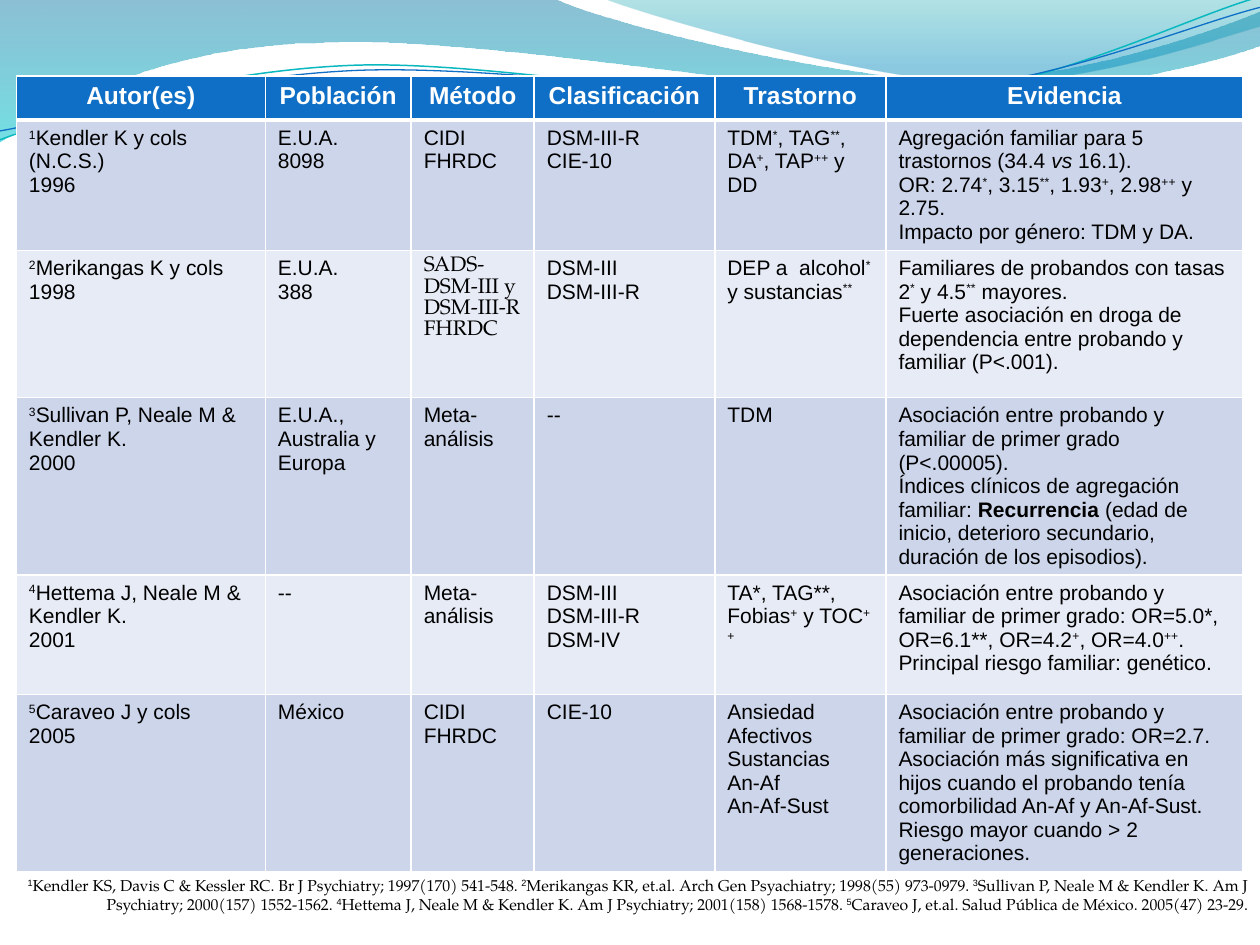
from lxml.etree import SubElement
from pptx import Presentation
from pptx.dml.color import RGBColor
from pptx.enum.text import PP_ALIGN
from pptx.oxml import parse_xml
from pptx.oxml.ns import nsdecls, qn
from pptx.util import Cm, Pt

COLORS = {
    "header": "0F6FC6", "odd row": "CCD5EA", "even row": "E7EBF5",
    "white": "FFFFFF", "black": "000000",
    "teal line": "0AB8BF", "blue line": "0F6FC6",
    "deep blue": "0074A1", "cyan": "00C6CF", "green": "00A1A9", "sky": "008BBF",
}
RGB = {name: RGBColor.from_string(value) for name, value in COLORS.items()}
SANS, SERIF = "Arial", "TeX Gyre Pagella"


def add_wave(slide, start, segments, close):
    """Draw an outline; a segment is one point (line) or three points (Bezier curve)."""
    builder = slide.shapes.build_freeform(Cm(start[0]), Cm(start[1]))
    ends = [(Cm(segment[-1][0]), Cm(segment[-1][1])) for segment in segments]
    builder.add_line_segments(ends, close=close)
    shape = builder.convert_to_shape()
    shape.shadow.inherit = False
    lines = list(shape._element.iter(qn("a:lnTo")))
    for line, segment in zip(lines, segments):
        if len(segment) == 3:
            points = "".join(f'<a:pt x="{Cm(x) - shape.left}" y="{Cm(y) - shape.top}"/>'
                             for x, y in segment)
            line.getparent().replace(line, parse_xml(
                f'<a:cubicBezTo {nsdecls("a")}>{points}</a:cubicBezTo>'))
    return shape


def write_runs(paragraph, text, size, name, color, mark_name=None):
    """Between bars, ^ marks superscript, / italic and * bold."""
    paragraph.font.size = Pt(size)
    paragraph.font.name = name
    paragraph.font.color.rgb = RGB[color]
    for index, piece in enumerate(text.split("|")):
        if not piece:
            continue
        run = paragraph.add_run()
        run.text = piece[1:] if index % 2 else piece
        if index % 2 and piece[0] == "^":
            run.font._element.set("baseline", "30000")
            if mark_name:
                run.font.name = mark_name
        elif index % 2:
            run.font.italic = piece[0] == "/" or None
            run.font.bold = piece[0] == "*" or None


presentation = Presentation()
presentation.slide_width, presentation.slide_height = Cm(25.4), Cm(19.05)
slide = presentation.slides.add_slide(presentation.slide_layouts[6])

# Translucent bands: start, segments, gradient stops (colour, position, opacity)
bands = [
    ((0, -0.03),
     [[(11.18, -0.03)],
      [(12.09, 0.43), (16.87, 1.6), (19.25, 1.6)],
      [(21.67, 1.6), (24.33, 0.66), (25.4, 0.23)],
      [(25.42, 0.91)],
      [(24.97, 1.12), (22.1, 1.93), (18.95, 1.91)],
      [(15.8, 1.91), (9.7, 0.71), (6.53, 0.86)],
      [(3.28, 0.89), (1.17, 2.11), (-0.03, 2.87)]],
     [("deep blue", 0, 45), ("cyan", 1, 55)]),
    ((12.17, -0.03),
     [[(12.93, 0.28), (17.32, 1.57), (19.53, 1.65)],
      [(21.74, 1.75), (24.41, 0.81), (25.4, 0.53)],
      [(25.4, 0)]],
     [("green", 0, 30), ("sky", 0.8, 45)]),
]
for start, segments, stops in bands:
    band = add_wave(slide, start, segments, close=True)
    band.line.fill.background()
    band.fill.gradient()
    band.fill.gradient_angle = 270
    for stop, (color, position, _) in zip(band.fill.gradient_stops, stops):
        stop.color.rgb = RGB[color]
        stop.position = position
    for element, (_, _, opacity) in zip(band._element.spPr.iter(qn("a:srgbClr")), stops):
        SubElement(element, qn("a:alpha")).set("val", str(opacity * 1000))

curves = [
    ((0, 2.82),
     [[(1.22, 2.36), (4.01, 1.45), (7.04, 1.32)],
      [(10.03, 1.19), (15.06, 2.26), (18.11, 2.03)],
      [(21.16, 1.8), (23.83, 0.38), (25.35, -0.05)]], "teal line", 0.85),
    ((0, 2.64),
     [[(1.19, 2.44), (4.17, 1.55), (7.19, 1.42)],
      [(10.24, 1.3), (15.16, 2.11), (18.21, 1.91)],
      [(21.23, 1.7), (23.9, 0.53), (25.4, 0.15)]], "blue line", 0.75),
]
for start, segments, color, width in curves:
    curve = add_wave(slide, start, segments, close=False)
    curve.fill.background()
    curve.line.color.rgb = RGB[color]
    curve.line.width = Pt(width)

# Table of studies
studies = [
    ["Autor(es)", "Población", "Método", "Clasificación", "Trastorno", "Evidencia"],
    ["|^1|Kendler K y cols (N.C.S.)\n1996", "E.U.A.\n8098", "CIDI\nFHRDC",
     "DSM-III-R\nCIE-10", "TDM|^*|, TAG|^**|,\nDA|^+|, TAP|^++| y DD",
     "Agregación familiar para 5 trastornos (34.4 |/vs| 16.1).\n"
     "OR: 2.74|^*|, 3.15|^**|, 1.93|^+|, 2.98|^++| y 2.75.\n"
     "Impacto por género: TDM y DA."],
    ["|^2|Merikangas K y cols\n1998", "E.U.A.\n388", "SADS-DSM-III y\nDSM-III-R\nFHRDC",
     "DSM-III\nDSM-III-R", "DEP a  alcohol|^*| y sustancias|^**|",
     "Familiares de probandos con tasas 2|^*| y 4.5|^**| mayores.\n"
     "Fuerte asociación en droga de dependencia entre probando y familiar (P<.001)."],
    ["|^3|Sullivan P, Neale M & Kendler K.\n2000", "E.U.A., Australia y Europa",
     "Meta-análisis", "--", "TDM",
     "Asociación entre probando y familiar de primer grado (P<.00005).\n"
     "Índices clínicos de agregación familiar: |*Recurrencia| (edad de inicio, "
     "deterioro secundario, duración de los episodios)."],
    ["|^4|Hettema J, Neale M & Kendler K.\n2001", "--", "Meta-análisis",
     "DSM-III\nDSM-III-R\nDSM-IV", "TA*, TAG**, Fobias|^+| y TOC|^++|",
     "Asociación entre probando y familiar de primer grado: OR=5.0*, OR=6.1**, "
     "OR=4.2|^+|, OR=4.0|^++|.\nPrincipal riesgo familiar: genético."],
    ["|^5|Caraveo J y cols\n2005", "México", "CIDI\nFHRDC", "CIE-10",
     "Ansiedad\nAfectivos\nSustancias\nAn-Af\nAn-Af-Sust",
     "Asociación entre probando y familiar de primer grado: OR=2.7.\n"
     "Asociación más significativa en hijos cuando el probando tenía comorbilidad "
     "An-Af y An-Af-Sust.\nRiesgo mayor cuando > 2 generaciones."],
]
column_widths = [5.02, 2.94, 2.48, 3.64, 3.45, 7.2]
row_heights = [0.89, 2.41, 2.97, 2.97, 2.41, 3.51]
table = slide.shapes.add_table(len(row_heights), len(column_widths), Cm(0.33), Cm(1.53),
                               Cm(sum(column_widths)), Cm(sum(row_heights))).table
for column, width in zip(table.columns, column_widths):
    column.width = Cm(width)
for row_index, (row, height) in enumerate(zip(table.rows, row_heights)):
    row.height = Cm(height)
    is_header = row_index == 0
    fill = "header" if is_header else "odd row" if row_index % 2 else "even row"
    thick_side = {0: "lnB", 1: "lnT"}.get(row_index)
    for cell, text in zip(row.cells, studies[row_index]):
        for side in ("lnL", "lnR", "lnT", "lnB"):
            width = Pt(3 if side == thick_side else 1)
            cell._tc.get_or_add_tcPr().append(parse_xml(
                f'<a:{side} {nsdecls("a")} w="{width}"><a:solidFill>'
                f'<a:srgbClr val="{COLORS["white"]}"/></a:solidFill></a:{side}>'))
        cell.fill.solid()
        cell.fill.fore_color.rgb = RGB[fill]
        name = SERIF if text.startswith("SADS") else SANS
        for index, line in enumerate(text.split("\n")):
            paragraph = cell.text_frame.add_paragraph() if index else cell.text_frame.paragraphs[0]
            write_runs(paragraph, line, 14 if is_header else 12, name,
                       "white" if is_header else "black")
            if is_header:
                paragraph.font.bold = True
                paragraph.alignment = PP_ALIGN.CENTER

# References
references = slide.shapes.add_textbox(Cm(0.13), Cm(17.53), Cm(25.27), Cm(1.02))
references.text_frame.word_wrap = True
paragraph = references.text_frame.paragraphs[0]
paragraph.alignment = PP_ALIGN.RIGHT
properties = paragraph._p.get_or_add_pPr()
properties.set("marL", str(Cm(0.76)))
properties.set("indent", str(Cm(-0.76)))
write_runs(paragraph,
           "|^1|Kendler KS, Davis C & Kessler RC. Br J Psychiatry; 1997(170) 541-548. "
           "|^2|Merikangas KR, et.al. Arch Gen Psyachiatry; 1998(55) 973-0979. "
           "|^3|Sullivan P, Neale M & Kendler K. Am J Psychiatry; 2000(157) 1552-1562. "
           "|^4|Hettema J, Neale M & Kendler K. Am J Psychiatry; 2001(158) 1568-1578. "
           "|^5|Caraveo J, et.al. Salud Pública de México. 2005(47) 23-29.",
           9, SERIF, "black", mark_name=SANS)

presentation.save("out.pptx")
